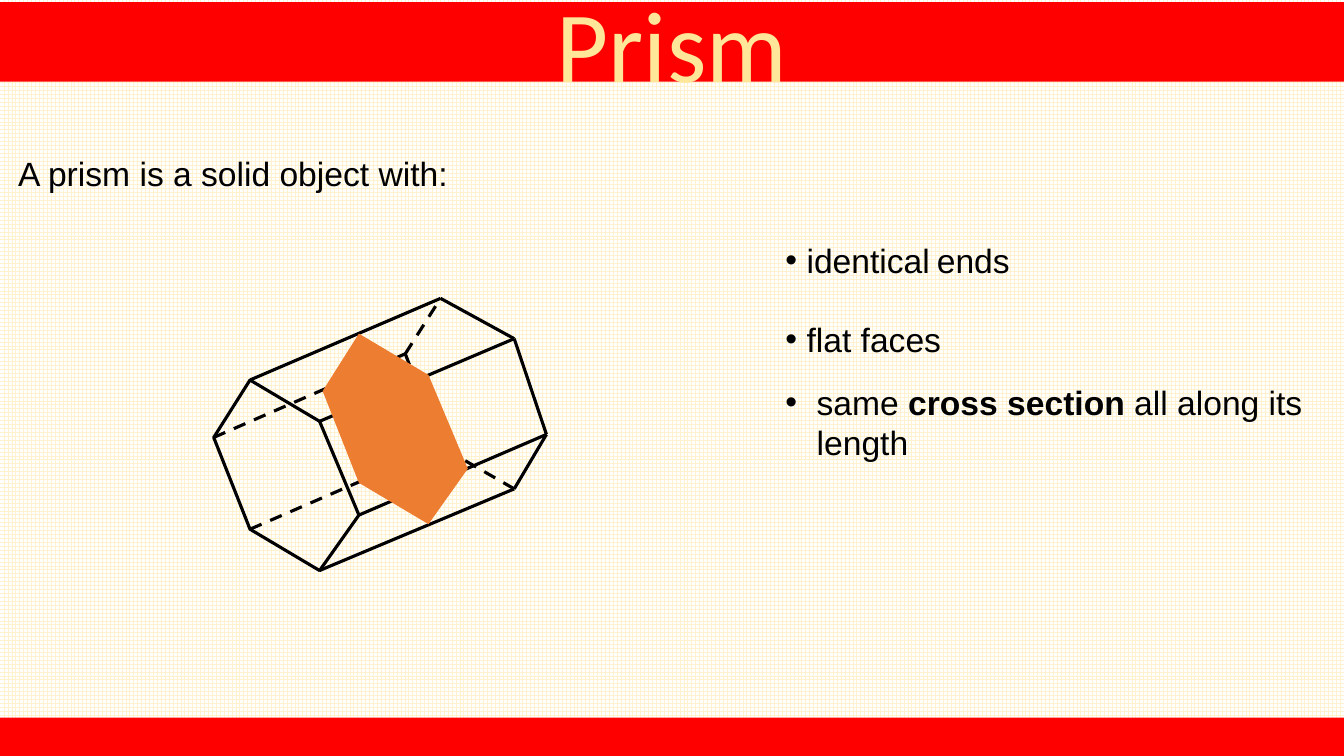
from dataclasses import dataclass

from lxml import etree
from pptx import Presentation
from pptx.dml.color import RGBColor
from pptx.enum.dml import MSO_LINE_DASH_STYLE, MSO_PATTERN_TYPE
from pptx.enum.shapes import MSO_CONNECTOR_TYPE, MSO_SHAPE
from pptx.enum.text import MSO_ANCHOR, MSO_AUTO_SIZE, PP_ALIGN
from pptx.oxml.ns import qn
from pptx.util import Inches, Pt

BLACK = RGBColor(0x00, 0x00, 0x00)
WHITE = RGBColor(0xFF, 0xFF, 0xFF)
RED = RGBColor(0xFF, 0x00, 0x00)
CREAM = RGBColor(0xFF, 0xF2, 0xCC)
GOLD = RGBColor(0xFF, 0xE6, 0x99)
ORANGE = RGBColor(0xED, 0x7D, 0x31)

DASH = MSO_LINE_DASH_STYLE.DASH
LARGE_GRID = MSO_PATTERN_TYPE.LARGE_GRID
STRAIGHT = MSO_CONNECTOR_TYPE.STRAIGHT
RECTANGLE = MSO_SHAPE.RECTANGLE
TOP, MIDDLE = MSO_ANCHOR.TOP, MSO_ANCHOR.MIDDLE
LEFT, CENTER = PP_ALIGN.LEFT, PP_ALIGN.CENTER
NO_AUTOFIT = MSO_AUTO_SIZE.NONE

COMPARISON_LAYOUT = 4
WIDTH, HEIGHT = 13.33, 7.5
EDGE_WIDTH = Pt(2.25)

Point = tuple[float, float]


@dataclass(frozen=True)
class Span:
    text: str
    bold: bool = False
    size: float = 24


@dataclass(frozen=True)
class Statement:
    left: float
    top: float
    width: float
    height: float
    spans: tuple[Span, ...]
    indent: float = 0  # a hanging indent brings a bullet


STATEMENTS = (
    Statement(0.08, 1.47, 7.28, 0.5, (Span("A prism is a solid object with:"),)),
    Statement(7.69, 2.33, 3.59, 0.5,
              (Span("identical"), Span(" ", size=18), Span("ends")), 0.21),
    Statement(7.69, 3.11, 2.79, 0.5, (Span("flat faces"),), 0.21),
    Statement(7.69, 3.74, 5.49, 1.31,
              (Span("same\u00a0".replace("\u00a0", " ")), Span("cross section", bold=True),
               Span(" all along its length")), 0.31),
)

# Corners run clockwise from the top; matching corners are joined along the prism
FRONT: tuple[Point, ...] = ((2.48, 3.77), (3.17, 4.18), (3.56, 5.11),
                            (3.17, 5.66), (2.48, 5.25), (2.12, 4.34))
REAR: tuple[Point, ...] = ((4.37, 2.96), (5.1, 3.36), (5.42, 4.31),
                           (5.1, 4.85), (4.37, 4.43), (4.02, 3.51))
SECTION_SHIFT: Point = (1.08, -0.46)
FIRST_HIDDEN_SIDE = 4
FIRST_HIDDEN_REAR_EDGE = 3


def place(shape, left: float, top: float, width: float, height: float) -> None:
    shape.left, shape.top = Inches(left), Inches(top)
    shape.width, shape.height = Inches(width), Inches(height)


def add_span(para, span: Span, font_name: str, color: RGBColor) -> None:
    run = para.add_run()
    run.text = span.text
    run.font.name = font_name
    run.font.size = Pt(span.size)
    run.font.bold = span.bold
    run.font.color.rgb = color


def set_bullet(para, indent: float) -> None:
    properties = para._p.get_or_add_pPr()
    properties.set("marL", str(Inches(indent)))
    properties.set("indent", str(-Inches(indent)))
    if indent:
        font = etree.SubElement(properties, qn("a:buFont"))
        font.set("typeface", "Arial")
        etree.SubElement(properties, qn("a:buChar")).set("char", "•")
    else:
        etree.SubElement(properties, qn("a:buNone"))


def fill_title(title) -> None:
    place(title, 0, 0.02, WIDTH, 0.79)
    title.fill.solid()
    title.fill.fore_color.rgb = RED
    frame = title.text_frame
    frame.auto_size = NO_AUTOFIT
    frame.vertical_anchor = MIDDLE
    para = frame.paragraphs[0]
    para.alignment = CENTER
    add_span(para, Span("Prism", size=72), "Calibri", GOLD)


def fill_statement(box, statement: Statement) -> None:
    place(box, statement.left, statement.top, statement.width, statement.height)
    frame = box.text_frame
    frame.auto_size = NO_AUTOFIT
    frame.word_wrap = True
    frame.vertical_anchor = TOP
    para = frame.paragraphs[0]
    para.alignment = LEFT
    para.space_before = Pt(0)
    set_bullet(para, statement.indent)
    for span in statement.spans:
        add_span(para, span, "Arial", BLACK)


def add_hexagon(page, corners: tuple[Point, ...]):
    points = [(Inches(x), Inches(y)) for x, y in corners]
    builder = page.shapes.build_freeform(*points[0])
    builder.add_line_segments(points[1:], close=True)
    hexagon = builder.convert_to_shape()
    hexagon.shadow.inherit = False
    return hexagon


def add_edge(page, start: Point, end: Point, hidden: bool) -> None:
    edge = page.shapes.add_connector(STRAIGHT, *(Inches(v) for v in start + end))
    edge.line.color.rgb = BLACK
    edge.line.width = EDGE_WIDTH
    if hidden:
        edge.line.dash_style = DASH
    etree.SubElement(edge._element.spPr, qn("a:effectLst"))


def add_prism(page) -> None:
    face = add_hexagon(page, FRONT)
    face.fill.background()
    face.line.color.rgb = BLACK
    face.line.width = EDGE_WIDTH

    for index, (front, rear) in enumerate(zip(FRONT, REAR)):
        add_edge(page, front, rear, index >= FIRST_HIDDEN_SIDE)
        add_edge(page, rear, REAR[(index + 1) % len(REAR)],
                 index >= FIRST_HIDDEN_REAR_EDGE)

    shift_x, shift_y = SECTION_SHIFT
    section = add_hexagon(page, tuple((x + shift_x, y + shift_y) for x, y in FRONT))
    section.fill.solid()
    section.fill.fore_color.rgb = ORANGE
    section.line.fill.background()


def main() -> None:
    deck = Presentation()
    deck.slide_width, deck.slide_height = Inches(WIDTH), Inches(HEIGHT)
    page = deck.slides.add_slide(deck.slide_layouts[COMPARISON_LAYOUT])

    # Grid background
    backdrop = page.background.fill
    backdrop.patterned()
    backdrop.pattern = LARGE_GRID
    backdrop.fore_color.rgb = CREAM
    backdrop.back_color.rgb = WHITE

    # Title band and statements
    fill_title(page.shapes.title)
    bodies = [box for box in page.placeholders if 1 <= box.placeholder_format.idx <= 4]
    for box, statement in zip(bodies, STATEMENTS):
        fill_statement(box, statement)

    # Footer band
    footer = page.shapes.add_shape(RECTANGLE, 0, Inches(7.12), Inches(WIDTH), Inches(0.39))
    footer.shadow.inherit = False
    footer.fill.solid()
    footer.fill.fore_color.rgb = RED
    footer.line.fill.background()

    # Prism with its cross section
    add_prism(page)

    deck.save("out.pptx")


if __name__ == "__main__":
    main()
